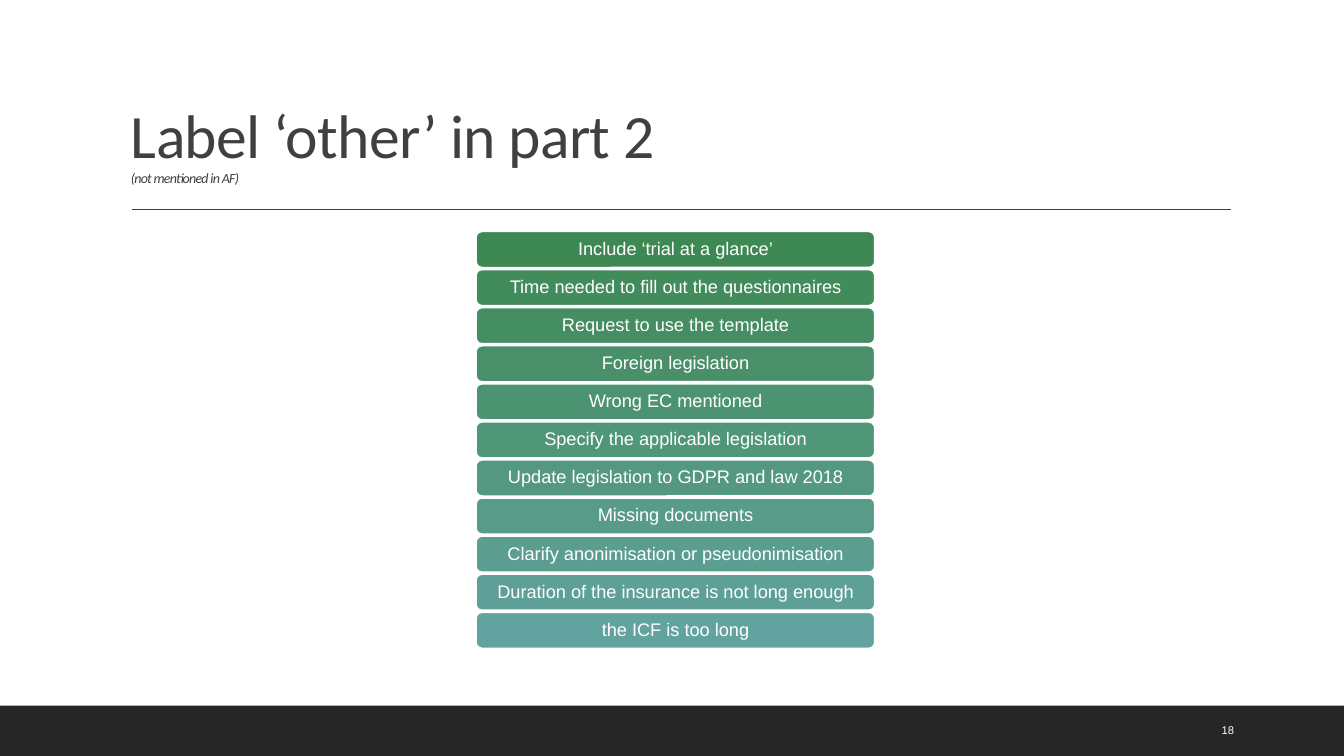
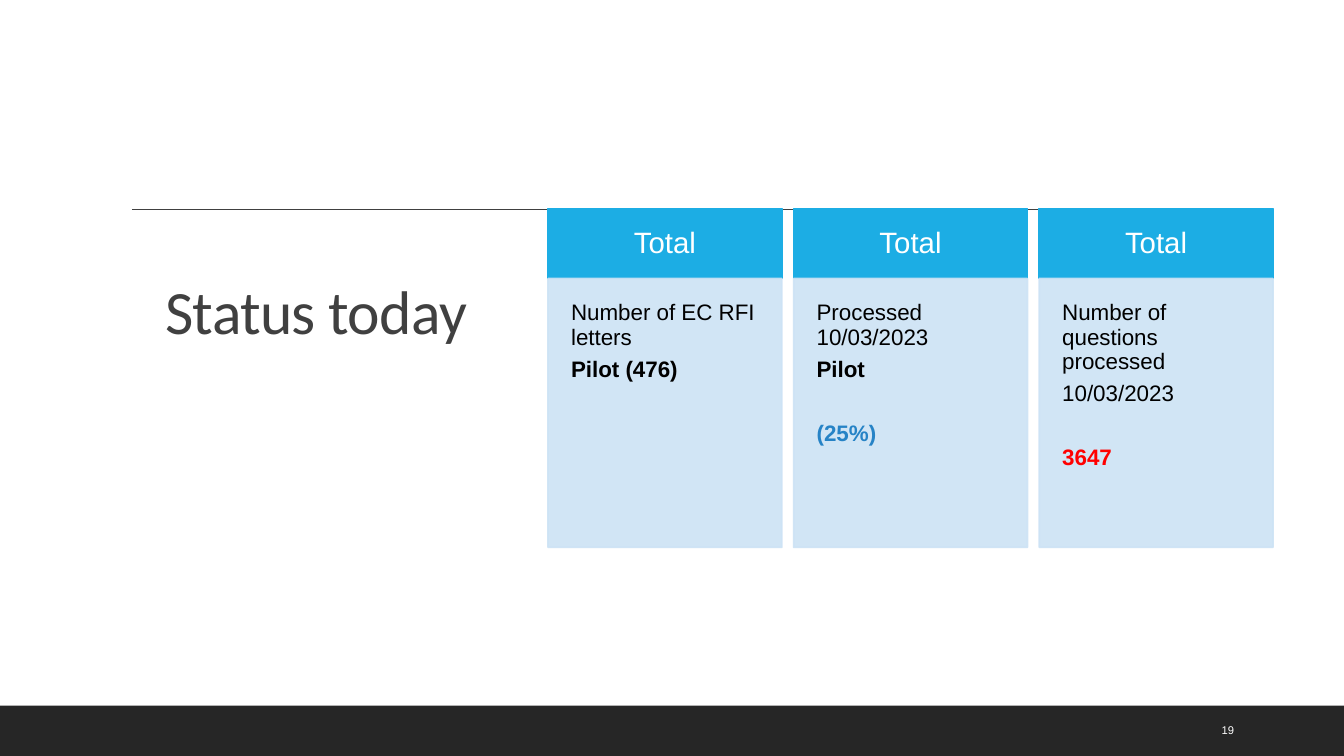
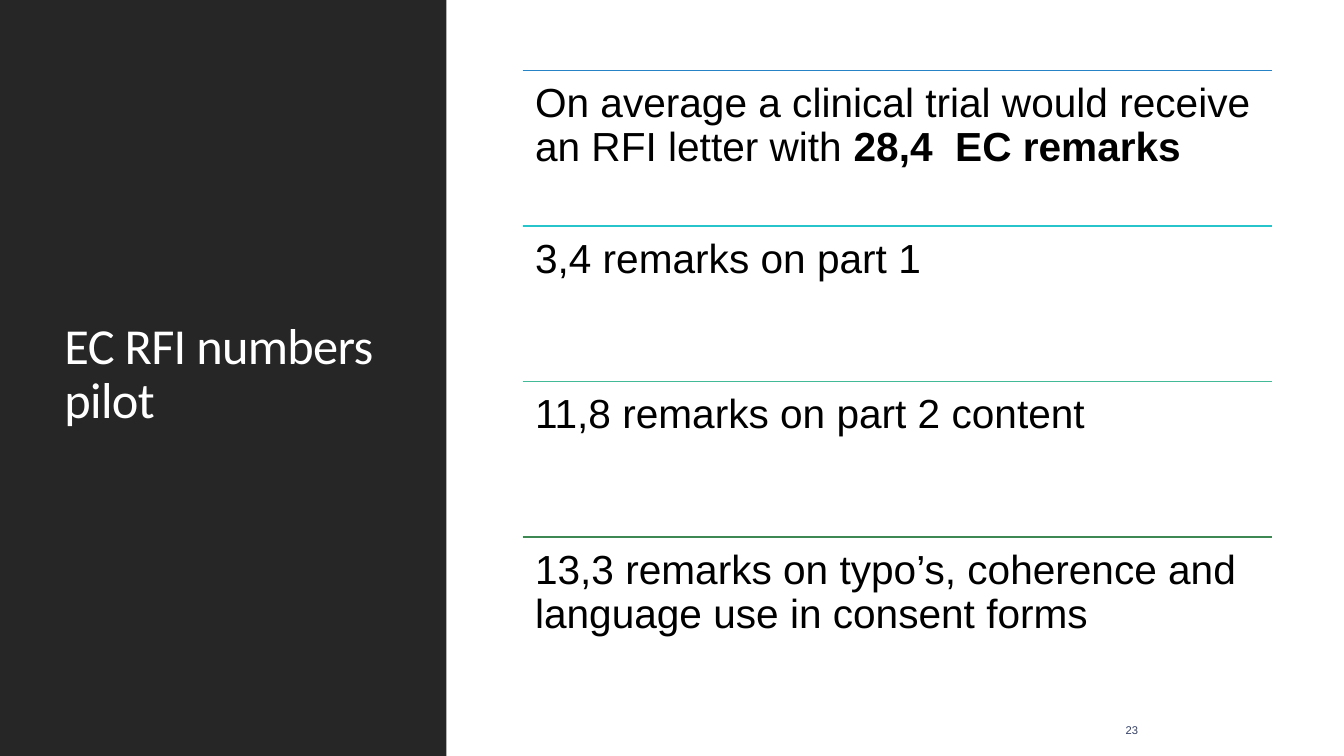
from dataclasses import dataclass

import lxml.etree
import pptx
import pptx.dml.color
import pptx.enum.shapes
import pptx.enum.text
import pptx.oxml.ns
import pptx.shapes.autoshape
import pptx.slide
import pptx.util

Pt = pptx.util.Pt
RGB = pptx.dml.color.RGBColor
Align = pptx.enum.text.PP_ALIGN
Anchor = pptx.enum.text.MSO_ANCHOR
Preset = pptx.enum.shapes.MSO_SHAPE


@dataclass(frozen=True)
class Theme:
    heading_font: str = "Calibri"
    body_font: str = "Arial"
    white: str = "FFFFFF"
    black: str = "000000"
    dark: str = "262626"
    grey: str = "404040"
    navy: str = "344068"
    blue: str = "2683C6"
    turquoise: str = "28C4CC"
    mint: str = "42BA97"
    green: str = "3E8853"
    sea: str = "62A39F"
    sky: str = "1CADE4"
    pale: str = "CDE3F5"
    red: str = "FF0000"
    title_size: float = 44
    side_title_size: float = 36
    subtitle_size: float = 10
    number_size: float = 8
    bar_size: float = 13
    card_head_size: float = 21
    card_size: float = 16
    remark_size: float = 29
    line_width: float = 1.25


@dataclass(frozen=True)
class Box:
    left: float
    top: float
    width: float
    height: float

    def lengths(self) -> tuple:
        return Pt(self.left), Pt(self.top), Pt(self.width), Pt(self.height)


@dataclass(frozen=True)
class Run:
    text: str
    bold: bool = False
    italic: bool = False
    color: str | None = None
    size: float | None = None
    new_line: bool = False


@dataclass(frozen=True)
class Para:
    runs: tuple[Run, ...]
    before: float = 0


@dataclass(frozen=True)
class Card:
    heading: str
    paras: tuple[Para, ...]


@dataclass(frozen=True)
class Remark:
    color: str
    runs: tuple[Run, ...]


T = Theme()
WIDTH, HEIGHT = 960, 540

BARS = (
    "Include ‘trial at a glance’",
    "Time needed to fill out the questionnaires",
    "Request to use the template",
    "Foreign legislation",
    "Wrong EC mentioned",
    "Specify the applicable legislation",
    "Update legislation to GDPR and law 2018",
    "Missing documents",
    "Clarify anonimisation or pseudonimisation",
    "Duration of the insurance is not long enough",
    "the ICF is too long",
)

RESULT_GAP = 22.9
CARDS = (
    Card("Total", (
        Para((Run("Number of EC RFI letters"),)),
        Para((Run("Pilot (476)", bold=True),)),
    )),
    Card("Total", (
        Para((Run("Processed 10/03/2023"),)),
        Para((Run("Pilot", bold=True),)),
        Para((Run("(25%)", bold=True, color=T.blue),), RESULT_GAP),
    )),
    Card("Total", (
        Para((Run("Number of questions processed"),)),
        Para((Run("10/03/2023"),)),
        Para((Run("3647", bold=True, color=T.red),), RESULT_GAP),
    )),
)

REMARKS = (
    Remark(T.blue, (
        Run("On average a clinical trial would receive an RFI letter with "),
        Run("28,4  EC remarks", bold=True),
    )),
    Remark(T.turquoise, (Run("3,4 remarks on part 1"),)),
    Remark(T.mint, (Run("11,8 remarks on part 2 content"),)),
    Remark(T.green, (
        Run("13,3 remarks on typo’s, coherence and language use in consent forms"),
    )),
)


def write(sp: pptx.shapes.autoshape.Shape, text: str | tuple[Para, ...], *,
          size: float, color: str, font: str = T.body_font,
          align: Align = Align.LEFT, anchor: Anchor = Anchor.MIDDLE,
          inset: tuple[float, float] = (7.2, 3.6), after: float = 0,
          tracking: float = 0) -> None:
    """Fill a shape with text; inset is (horizontal, vertical)."""
    tf = sp.text_frame
    tf.word_wrap = True
    tf.vertical_anchor = anchor
    tf.margin_left = tf.margin_right = Pt(inset[0])
    tf.margin_top = tf.margin_bottom = Pt(inset[1])
    paras = (Para((Run(text),)),) if isinstance(text, str) else text
    for i, para in enumerate(paras):
        p = tf.add_paragraph() if i else tf.paragraphs[0]
        p.alignment = align
        p.line_spacing = 0.9
        p.space_before = Pt(para.before)
        p.space_after = Pt(after)
        for run in para.runs:
            if run.new_line:
                p.add_line_break()
            r = p.add_run()
            r.text = run.text
            r.font.name = font
            r.font.size = Pt(run.size or size)
            r.font.bold = run.bold
            r.font.italic = run.italic
            r.font.color.rgb = RGB.from_string(run.color or color)
            if tracking:
                r.font._element.set("spc", str(round(tracking * 100)))


def add_box(slide: pptx.slide.Slide, box: Box, fill: str, line: str | None = None,
            preset: Preset = Preset.RECTANGLE,
            opacity: int = 100) -> pptx.shapes.autoshape.Shape:
    sp = slide.shapes.add_shape(preset, *box.lengths())
    sp.shadow.inherit = False
    sp.fill.solid()
    sp.fill.fore_color.rgb = RGB.from_string(fill)
    if line:
        sp.line.color.rgb = RGB.from_string(line)
        sp.line.width = Pt(T.line_width)
    else:
        sp.line.fill.background()
    if opacity < 100:
        for clr in sp._element.spPr.iter(pptx.oxml.ns.qn("a:srgbClr")):
            alpha = lxml.etree.SubElement(clr, pptx.oxml.ns.qn("a:alpha"))
            alpha.set("val", str(opacity * 1000))
    return sp


def add_rule(slide: pptx.slide.Slide, left: float, right: float, y: float,
             color: str, width: float = T.line_width) -> None:
    """Draw a horizontal line."""
    cxn = slide.shapes.add_connector(
        pptx.enum.shapes.MSO_CONNECTOR.STRAIGHT, Pt(left), Pt(y), Pt(right), Pt(y))
    cxn.line.color.rgb = RGB.from_string(color)
    cxn.line.width = Pt(width)
    lxml.etree.SubElement(cxn._element.spPr, pptx.oxml.ns.qn("a:effectLst"))


def add_text(slide: pptx.slide.Slide, box: Box, text: str | tuple[Para, ...],
             **style) -> None:
    write(slide.shapes.add_textbox(*box.lengths()), text, **style)


def add_title(slide: pptx.slide.Slide, box: Box, text: str | tuple[Para, ...],
              size: float = T.title_size, color: str = T.grey, **style) -> None:
    add_text(slide, box, text, size=size, color=color, font=T.heading_font,
             tracking=-0.5, **style)


def add_number(slide: pptx.slide.Slide, number: int, left: float = 865.5,
               color: str = T.white) -> None:
    add_text(slide, Box(left, 507.9, 61, 28.8), str(number),
             size=T.number_size, color=color)


def add_frame(slide: pptx.slide.Slide, number: int) -> None:
    """Draw the title rule, the bottom band and the slide number."""
    add_rule(slide, 94.3, 879, 149.5, T.grey, 1)
    add_box(slide, Box(0, 504, WIDTH, 36), T.dark)
    add_number(slide, number)


def blend(start: str, end: str, share: float) -> str:
    pairs = zip(RGB.from_string(start), RGB.from_string(end))
    return str(RGB(*(round(a + (b - a) * share) for a, b in pairs)))


def build_labels(slide: pptx.slide.Slide) -> None:
    add_frame(slide, 18)
    title = Para((
        Run("Label ‘other’ in part 2"),
        Run("(not mentioned in AF)", italic=True, size=T.subtitle_size, new_line=True),
    ))
    add_title(slide, Box(86.4, 22.3, 792, 114.5), (title,), anchor=Anchor.BOTTOM)
    pitch = 27.2
    for i, label in enumerate(BARS):
        fill = blend(T.green, T.sea, i / (len(BARS) - 1))
        sp = add_box(slide, Box(340, 165.3 + i * pitch, 284.9, 25.9), fill, T.white,
                     Preset.ROUNDED_RECTANGLE)
        write(sp, label, size=T.bar_size, color=T.white, align=Align.CENTER)


def build_status(slide: pptx.slide.Slide) -> None:
    add_frame(slide, 19)
    add_title(slide, Box(50.4, 25.7, 290.2, 398), "Status today", align=Align.RIGHT)
    left, top, width, pitch = 391.5, 149, 167, 175.4
    head_height, body_height = 50, 192
    for i, card in enumerate(CARDS):
        x = left + i * pitch
        head = add_box(slide, Box(x, top, width, head_height), T.sky, T.sky)
        write(head, card.heading, size=T.card_head_size, color=T.white,
              align=Align.CENTER, inset=(13, 13))
        body = add_box(slide, Box(x, top + head_height, width, body_height),
                       T.pale, T.pale, opacity=90)
        write(body, card.paras, size=T.card_size, color=T.black, anchor=Anchor.TOP,
              inset=(16.4, 16.4), after=5.6)


def build_numbers(slide: pptx.slide.Slide) -> None:
    add_box(slide, Box(0, 0, 318.8, HEIGHT), T.dark)
    add_title(slide, Box(39, 41, 242.6, 454.3), "EC RFI numbers pilot",
              size=T.side_title_size, color=T.white)
    add_number(slide, 23, 797, T.navy)
    left, width, pitch = 373.5, 535, 111.1
    for i, remark in enumerate(REMARKS):
        y = 50.3 + i * pitch
        add_rule(slide, left, left + width, y, remark.color)
        add_text(slide, Box(left, y, width, pitch), (Para(remark.runs),),
                 size=T.remark_size, color=T.black, anchor=Anchor.TOP, inset=(8.7, 8.7))


def main() -> None:
    prs = pptx.Presentation()
    prs.slide_width, prs.slide_height = Pt(WIDTH), Pt(HEIGHT)
    for build in (build_labels, build_status, build_numbers):
        build(prs.slides.add_slide(prs.slide_layouts[6]))
    prs.save("out.pptx")


if __name__ == "__main__":
    main()
